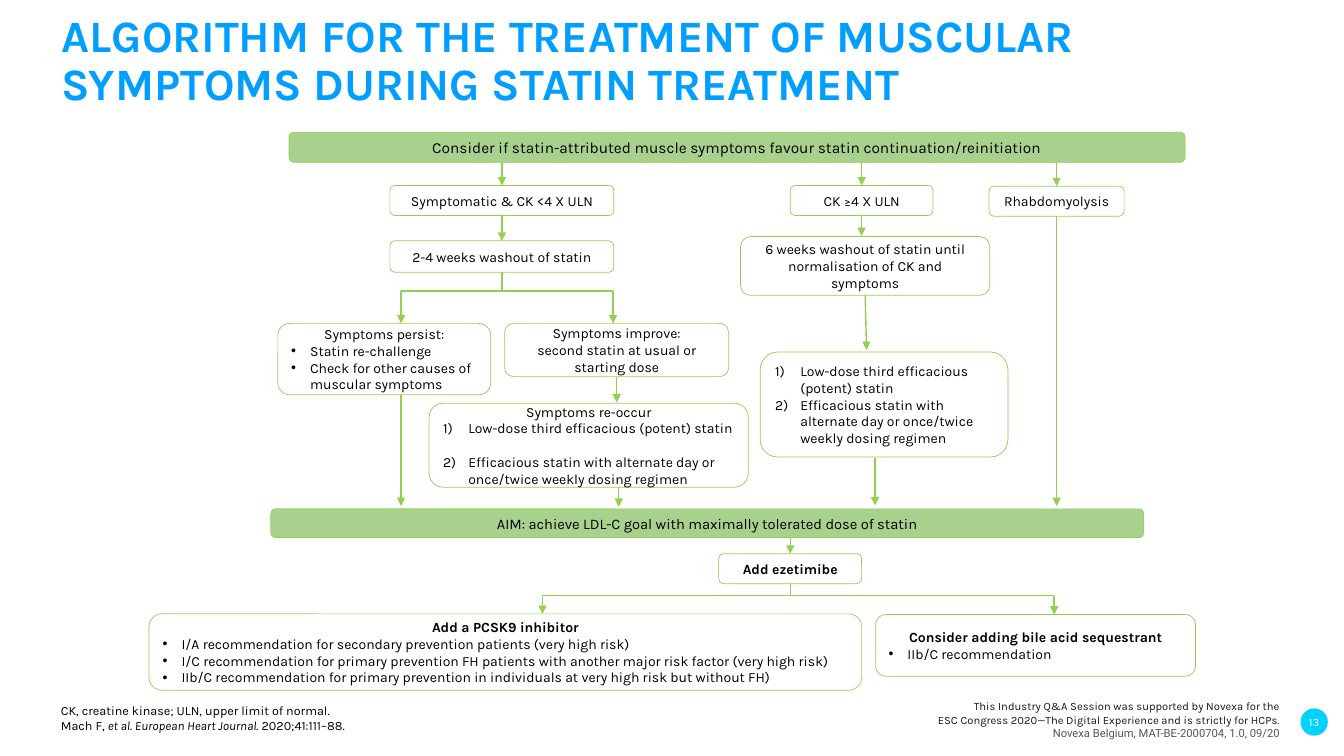
from dataclasses import dataclass
from lxml import etree
from pptx import Presentation
from pptx.dml.color import RGBColor
from pptx.enum.shapes import MSO_CONNECTOR, MSO_SHAPE
from pptx.enum.text import MSO_ANCHOR, PP_ALIGN
from pptx.oxml.ns import qn
from pptx.util import Pt

ROUND, OVAL = MSO_SHAPE.ROUNDED_RECTANGLE, MSO_SHAPE.OVAL
STRAIGHT = MSO_CONNECTOR.STRAIGHT
LEFT, CENTER, RIGHT = PP_ALIGN.LEFT, PP_ALIGN.CENTER, PP_ALIGN.RIGHT
MIDDLE, BOTTOM = MSO_ANCHOR.MIDDLE, MSO_ANCHOR.BOTTOM
TOP_SIDE, BOTTOM_SIDE = 0, 2


@dataclass(frozen=True)
class Theme:
    font: str = "Karla"
    code_font: str = "Roboto"
    title: str = "009FFF"
    text: str = "000000"
    support: str = "181717"
    code: str = "555555"
    white: str = "FFFFFF"
    badge: str = "00D2FF"
    bar: str = "A9D18E"
    line: str = "92D050"
    title_size: float = 32
    header_size: float = 11
    aim_size: float = 10.5
    body_size: float = 10
    note_size: float = 9
    small_size: float = 8


T = Theme()

BARS = {
    "header": ((206.5, 94.5, 640, 21.5), T.header_size,
               "Consider if statin-attributed muscle symptoms favour statin continuation/reinitiation"),
    "aim": ((193.5, 363.5, 623.5, 20.5), T.aim_size,
            "AIM: achieve LDL-C goal with maximally tolerated dose of statin"),
}

BOXES = {
    "mild": ((278.5, 132.5, 160, 21.5), [("plain", "Symptomatic & CK <4 X ULN")]),
    "raised": ((564.5, 132.5, 102, 21.5), [("plain", "CK ≥4 X ULN")]),
    "rhabdo": ((706.5, 133, 96.5, 21.5), [("plain", "Rhabdomyolysis")]),
    "short_washout": ((278.5, 172, 160, 22.5), [("plain", "2-4 weeks washout of statin")]),
    "long_washout": ((529, 169, 178, 42), [
        ("plain", "6 weeks washout of statin until normalisation of CK and symptoms")]),
    "persist": ((198.5, 231, 152, 51), [
        ("plain", "Symptoms persist:"),
        ("bullet", "Statin re-challenge"),
        ("bullet", "Check for other causes of muscular symptoms")]),
    "improve": ((360.5, 231, 160, 38), [
        ("plain", "Symptoms improve:"),
        ("plain", "second statin at usual or starting dose")]),
    "third_statin": ((543, 251.5, 177, 75), [
        ("number", "Low-dose third efficacious (potent) statin"),
        ("number", "Efficacious statin with alternate day or once/twice weekly dosing regimen")]),
    "reoccur": ((306.5, 288, 228, 60), [
        ("plain", "Symptoms re-occur"),
        ("number", "Low-dose third efficacious (potent) statin"),
        ("spaced_number", "Efficacious statin with alternate day or once/twice weekly dosing regimen")]),
    "ezetimibe": ((513.5, 395.5, 102, 21.5), [("bold", "Add ezetimibe")]),
    "pcsk9": ((106.5, 438.5, 509, 54.5), [
        ("bold", "Add a PCSK9 inhibitor"),
        ("bullet", "I/A recommendation for secondary prevention patients (very high risk)"),
        ("bullet", "I/C recommendation for primary prevention FH patients with another major risk factor (very high risk)"),
        ("bullet", "IIb/C recommendation for primary prevention in individuals at very high risk but without FH)")]),
    "sequestrant": ((625.5, 439, 228.5, 44), [
        ("bold", "Consider adding bile acid sequestrant"),
        ("bullet", "IIb/C recommendation")]),
}

ARROWS = [
    ((358.5, 116), ("mild", TOP_SIDE)),
    ((615.5, 116), ("raised", TOP_SIDE)),
    ((754.75, 116), ("rhabdo", TOP_SIDE)),
    (("mild", BOTTOM_SIDE), ("short_washout", TOP_SIDE)),
    (("raised", BOTTOM_SIDE), (615.5, 168.5)),
    ((286.5, 208), (286.5, 231)),
    ((438, 208), (438, 231)),
    (("long_washout", BOTTOM_SIDE), (619, 250)),
    (("improve", BOTTOM_SIDE), (440.5, 287.5)),
    ((442, 348), (442, 362)),
    ((286.5, 282), (286.5, 361.5)),
    (("rhabdo", BOTTOM_SIDE), (754.75, 361.5)),
    ((625, 327), (625, 361)),
    ((564.5, 384.5), ("ezetimibe", TOP_SIDE)),
    ((387.5, 425.5), (387.5, 438.5)),
    ((753, 425.5), (753, 439)),
]

BRANCHES = [
    (("short_washout", BOTTOM_SIDE), (358.5, 208)),
    ((286.5, 208), (438, 208)),
    (("ezetimibe", BOTTOM_SIDE), (564.5, 425.5)),
    ((387.5, 425.5), (753, 425.5)),
]


def apply(target, values):
    for name, value in values.items():
        setattr(target, name, value)


def add_run(p, text, size, color=T.text, **extra):
    r = p.add_run()
    r.text = text
    apply(r.font, {"name": T.font, "size": Pt(size), **extra})
    r.font.color.rgb = RGBColor.from_string(color)


def next_paragraph(tf):
    p = tf.paragraphs[0]
    return tf.add_paragraph() if p.runs else p


def add_list_mark(p, kind):
    indent = Pt(18 if kind == "number" else 13.5)
    pPr = p._p.get_or_add_pPr()
    pPr.set("marL", str(indent))
    pPr.set("indent", str(-indent))
    if kind == "number":
        etree.SubElement(pPr, qn("a:buAutoNum")).set("type", "arabicParenR")
    else:
        etree.SubElement(pPr, qn("a:buFont")).set("typeface", "Arial")
        etree.SubElement(pPr, qn("a:buChar")).set("char", "•")


def add_text_box(s, at, anchor):
    tf = s.shapes.add_textbox(*map(Pt, at)).text_frame
    apply(tf, {"word_wrap": True, "vertical_anchor": anchor, "margin_left": 0,
               "margin_right": 0, "margin_top": 0, "margin_bottom": 0})
    return tf


def add_box(s, at, paragraphs, size=T.body_size, fill=None):
    sp = s.shapes.add_shape(ROUND, *map(Pt, at))
    sp.shadow.inherit = False
    if fill:
        sp.fill.solid()
        sp.fill.fore_color.rgb = RGBColor.from_string(fill)
    else:
        sp.fill.background()
    sp.line.color.rgb = RGBColor.from_string(T.line)
    sp.line.width = Pt(0.5)
    tf = sp.text_frame
    apply(tf, {"word_wrap": True, "vertical_anchor": MIDDLE, "margin_top": 0, "margin_bottom": 0})
    for style, text in paragraphs:
        p = next_paragraph(tf)
        kind = style.removeprefix("spaced_")
        if kind in ("bullet", "number"):
            add_list_mark(p, kind)
            p.alignment = LEFT
        else:
            p.alignment = CENTER
        if style != kind:
            p.space_before = Pt(12)
        add_run(p, text, size, bold=style == "bold")
    return sp


def add_line(s, boxes, start, end, arrow):
    points = [(0, 0) if a in boxes else (a, b) for a, b in (start, end)]
    cx = s.shapes.add_connector(STRAIGHT, *(Pt(v) for point in points for v in point))
    for (name, site), connect in ((start, cx.begin_connect), (end, cx.end_connect)):
        if name in boxes:
            connect(boxes[name], site)
    cx.line.color.rgb = RGBColor.from_string(T.line)
    cx.line.width = Pt(1)
    if arrow:
        etree.SubElement(cx.line._get_or_add_ln(), qn("a:tailEnd")).set("type", "triangle")
    etree.SubElement(cx._element.spPr, qn("a:effectLst"))


def add_title(s, text):
    p = add_text_box(s, (44, 29, 779, 50), BOTTOM).paragraphs[0]
    p.line_spacing = 0.9
    add_run(p, text, T.title_size, T.title, bold=True)


def add_notes_line(s):
    tf = add_text_box(s, (43.5, 499.5, 576.5, 24.5), BOTTOM)
    p = next_paragraph(tf)
    add_run(p, "CK, creatine kinase; ULN, upper limit of normal.", T.note_size)
    p = next_paragraph(tf)
    p.space_before = Pt(1)
    add_run(p, "Mach F, ", T.note_size)
    add_run(p, "et al. European Heart Journal", T.note_size, italic=True)
    add_run(p, ". 2020;41:111–88.", T.note_size)
    for p in tf.paragraphs:
        p.line_spacing = 0.9


def add_support_line(s):
    tf = add_text_box(s, (633.5, 499, 281, 29.5), BOTTOM)
    for text, font, color in (
            ("This Industry Q&A Session was supported by Novexa for the", T.font, T.support),
            ("ESC Congress 2020—The Digital Experience and is strictly for HCPs.", T.font, T.support),
            ("Novexa Belgium, MAT-BE-2000704, 1.0, 09/20", T.code_font, T.code)):
        p = next_paragraph(tf)
        p.alignment = RIGHT
        add_run(p, text, T.small_size, color, name=font)


def add_page_badge(s, number):
    sp = s.shapes.add_shape(OVAL, Pt(929), Pt(506), Pt(19.5), Pt(19.5))
    sp.shadow.inherit = False
    sp.fill.solid()
    sp.fill.fore_color.rgb = RGBColor.from_string(T.badge)
    sp.line.fill.background()
    tf = sp.text_frame
    apply(tf, {"word_wrap": False, "vertical_anchor": MIDDLE, "margin_left": 0,
               "margin_right": 0, "margin_top": 0, "margin_bottom": 0})
    p = tf.paragraphs[0]
    p.alignment = CENTER
    add_run(p, number, T.small_size, T.white)


def main():
    prs = Presentation()
    apply(prs, {"slide_width": Pt(960), "slide_height": Pt(540)})
    s = prs.slides.add_slide(prs.slide_layouts[6])
    add_title(s, "ALGORITHM FOR THE TREATMENT OF MUSCULAR SYMPTOMS DURING STATIN TREATMENT")
    for at, size, text in BARS.values():
        add_box(s, at, [("plain", text)], size, T.bar)
    boxes = {name: add_box(s, at, paragraphs) for name, (at, paragraphs) in BOXES.items()}
    for lines, arrow in ((BRANCHES, False), (ARROWS, True)):
        for start, end in lines:
            add_line(s, boxes, start, end, arrow)
    add_notes_line(s)
    add_support_line(s)
    add_page_badge(s, "13")
    prs.save("out.pptx")


if __name__ == "__main__":
    main()
